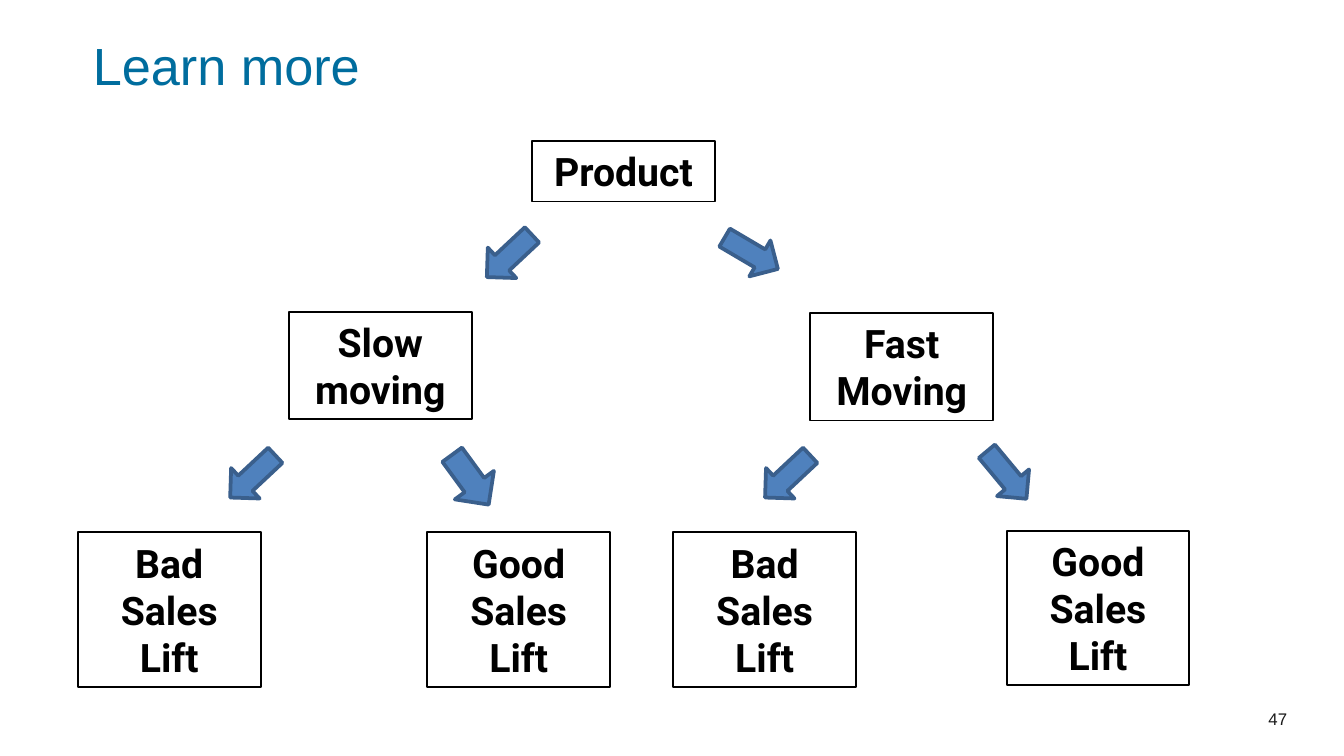
from pptx import Presentation
from pptx.dml.color import RGBColor
from pptx.enum.shapes import MSO_SHAPE as Shape
from pptx.enum.text import MSO_ANCHOR as Anchor, MSO_AUTO_SIZE as Fit, PP_ALIGN as Align
from pptx.util import Inches, Pt

NODES = [
    ("Product", 3.96, 1.05, 0.45),
    ("Slow moving", 2.15, 2.32, 0.8),
    ("Fast Moving", 6.03, 2.33, 0.8),
    ("Bad Sales Lift", 5.01, 3.96, 1.15),
    ("Good Sales Lift", 7.49, 3.95, 1.15),
    ("Bad Sales Lift", 0.58, 3.96, 1.15),
    ("Good Sales Lift", 3.18, 3.96, 1.15),
]
ARROWS = [
    (3.56, 1.75, 0.31, 136.9),
    (5.36, 1.73, 0.31, 30.5),
    (1.65, 3.39, 0.31, 136.9),
    (3.27, 3.39, 0.36, 53.8),
    (5.63, 3.39, 0.31, 136.9),
    (7.26, 3.38, 0.31, 50.2),
]


def color(code):
    """Return the colour of a hex string."""
    return RGBColor.from_string(code)


def style(para, face, size, code, bold=False):
    """Set the font of a paragraph."""
    font = para.font
    font.name, font.size, font.bold = face, Pt(size), bold
    font.color.rgb = color(code)


def add_form(slide, kind, box, fill, line, width):
    """Add a filled and outlined shape without a shadow."""
    form = slide.shapes.add_shape(kind, *map(Inches, box))
    form.shadow.inherit = False
    form.fill.solid()
    form.fill.fore_color.rgb = color(fill)
    form.line.color.rgb = color(line)
    form.line.width = Pt(width)
    return form


def add_node(slide, text, left, top, height):
    """Add a labelled box of the tree."""
    box = left, top, 1.36, height
    node = add_form(slide, Shape.RECTANGLE, box, "FFFFFF", "000000", 1)
    frame = node.text_frame
    frame.word_wrap = True
    frame.auto_size = Fit.SHAPE_TO_FIT_TEXT
    frame.vertical_anchor = Anchor.TOP
    para = frame.paragraphs[0]
    para.text = text
    para.alignment = Align.CENTER
    style(para, "Roboto", 21, "000000", True)


def add_arrow(slide, left, top, height, angle):
    """Add a turned block arrow."""
    box = left, top, 0.46, height
    arrow = add_form(slide, Shape.RIGHT_ARROW, box, "4F81BD", "3A5F8C", 2)
    arrow.rotation = angle


def set_title(slide, text):
    """Place and fill the title."""
    title = slide.shapes.title
    title.left, title.top, title.width, title.height = map(Inches, (0.69, 0.3, 8.62, 0.42))
    frame = title.text_frame
    frame.margin_left = frame.margin_top = frame.margin_right = frame.margin_bottom = 0
    frame.auto_size = Fit.SHAPE_TO_FIT_TEXT
    para = frame.paragraphs[0]
    para.text = text
    para.alignment = Align.LEFT
    para.line_spacing = 0.9
    style(para, "Arial", 28, "006D9E")


def add_number(slide, text):
    """Add the page number."""
    frame = slide.shapes.add_textbox(*map(Inches, (9.34, 5.24, 0.44, 0.4))).text_frame
    frame.word_wrap = True
    para = frame.paragraphs[0]
    para.text = text
    para.line_spacing = 0.9
    style(para, "Arial", 9, "191919")


def main():
    """Build the slide and save it."""
    deck = Presentation()
    deck.slide_width, deck.slide_height = Inches(10), Inches(10 * 9 / 16)
    slide = deck.slides.add_slide(deck.slide_layouts[5])
    add_number(slide, "47")
    set_title(slide, "Learn more")
    for node in NODES:
        add_node(slide, *node)
    for arrow in ARROWS:
        add_arrow(slide, *arrow)
    deck.save("out.pptx")


if __name__ == "__main__":
    main()
